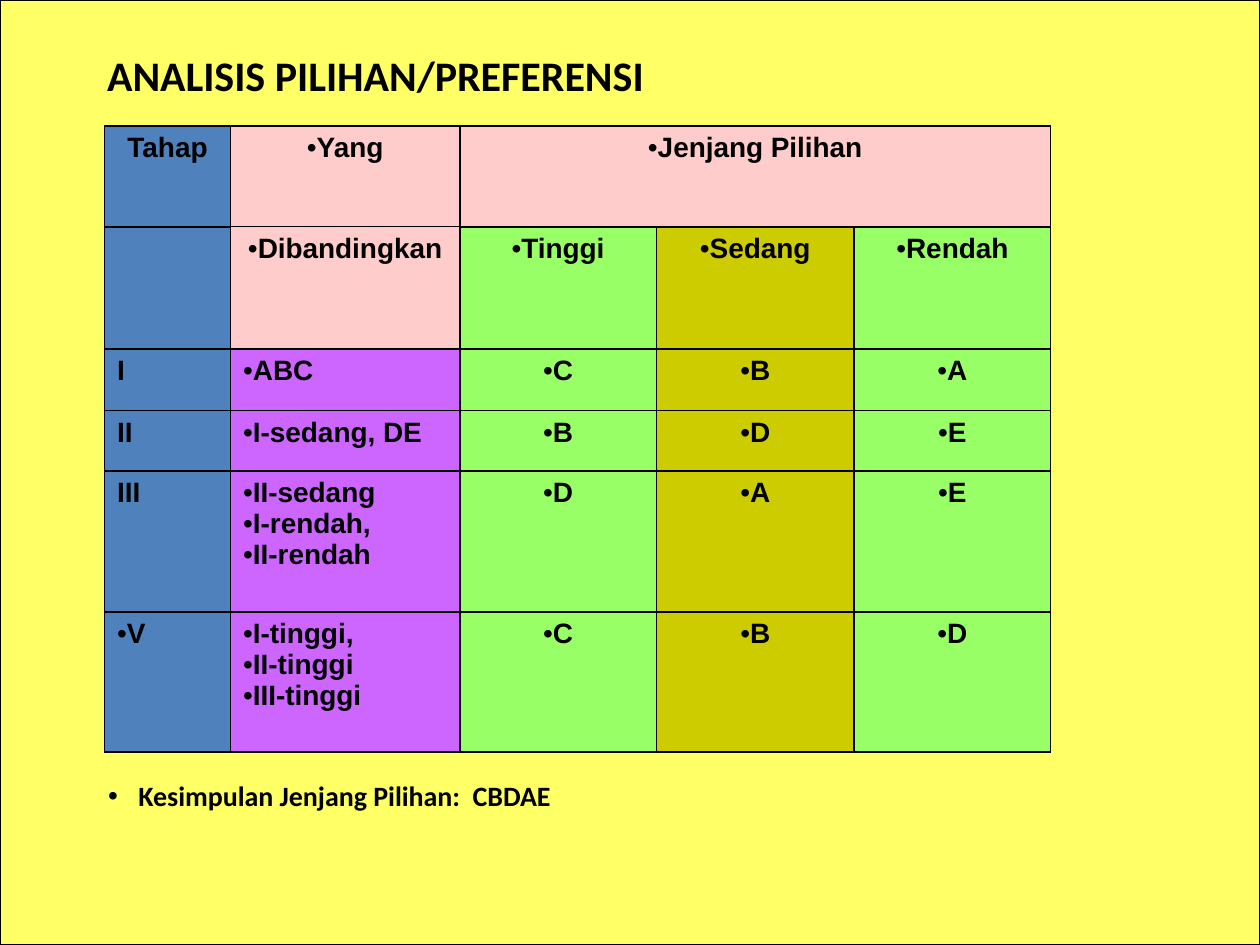
"""Build a preference-analysis slide with a staged comparison table."""
from lxml import etree
from pptx import Presentation, util as u
from pptx.dml.color import RGBColor
from pptx.enum import shapes, text
from pptx.oxml import ns

BLACK, BLUE, PINK = "000000", "4F81BD", "FFCCCC"
PURPLE, GREEN, OLIVE = "CC66FF", "99FF66", "CCCC00"
CENTER, JUSTIFY, LEFT = text.PP_ALIGN.CENTER, text.PP_ALIGN.JUSTIFY, text.PP_ALIGN.LEFT


def paint(fill, color):
    fill.solid()
    fill.fore_color.rgb = RGBColor.from_string(color)


def write(paragraph, words, font, size, align, bullet=False, margin=0, indent=0):
    paragraph.alignment = align
    run = paragraph.add_run()
    run.text = words
    run.font.name, run.font.size, run.font.bold = font, u.Pt(size), True
    paint(run.font.fill, BLACK)
    if bullet:
        props = paragraph._p.get_or_add_pPr()
        props.set("marL", str(u.Inches(margin)))
        props.set("indent", str(u.Inches(indent)))
        etree.SubElement(props, ns.qn("a:buFont"), typeface="Arial")
        etree.SubElement(props, ns.qn("a:buChar"), char="•")


deck = Presentation()
deck.slide_width, deck.slide_height = u.Inches(10), u.Inches(7.5)
slide = deck.slides.add_slide(deck.slide_layouts[5])

backdrop = slide.shapes.add_shape(
    shapes.MSO_SHAPE.RECTANGLE, 0, 0, deck.slide_width, deck.slide_height)
backdrop.shadow.inherit = False
paint(backdrop.fill, "FFFF66")
paint(backdrop.line.fill, BLACK)
backdrop.line.width = u.Pt(0.75)
slide.shapes._spTree.insert(2, backdrop._element)

heading = slide.shapes.title
heading.left, heading.top = u.Inches(0.75), u.Inches(0.34)
heading.width, heading.height = u.Inches(5.4), u.Inches(0.5)
heading.text_frame.word_wrap = False
heading.text_frame.vertical_anchor = text.MSO_ANCHOR.TOP
write(heading.text_frame.paragraphs[0], "ANALISIS PILIHAN/PREFERENSI", "Calibri", 24, LEFT)

stages = [
    ["Tahap", "Yang", "Jenjang Pilihan", "", ""],
    ["", "Dibandingkan", "Tinggi", "Sedang", "Rendah"],
    ["I", "ABC", "C", "B", "A"],
    ["II", "I-sedang, DE", "B", "D", "E"],
    ["III", "II-sedang \nI-rendah, \nII-rendah", "D", "A", "E"],
    ["V", "I-tinggi, \nII-tinggi\nIII-tinggi", "C", "B", "D"],
]
row_colors = [[BLUE] + [PINK] * 4, [BLUE, PINK, GREEN, OLIVE, GREEN]]
row_colors += [[BLUE, PURPLE, GREEN, OLIVE, GREEN]] * 4
widths = [1, 1.82, 1.56, 1.57, 1.56]
heights = [0.8, 0.97, 0.49, 0.48, 1.12, 1.11]

ranking = slide.shapes.add_table(
    len(heights), len(widths), u.Inches(0.83), u.Inches(1),
    u.Inches(sum(widths)), u.Inches(sum(heights))).table
for column, width in zip(ranking.columns, widths):
    column.width = u.Inches(width)
for row, height in zip(ranking.rows, heights):
    row.height = u.Inches(height)
ranking.cell(0, 2).merge(ranking.cell(0, 4))

for r, (stage, colors) in enumerate(zip(stages, row_colors)):
    for c, (entry, color) in enumerate(zip(stage, colors)):
        cell = ranking.cell(r, c)
        props = cell._tc.get_or_add_tcPr()
        for side in ("lnL", "lnR", "lnT", "lnB"):
            hairline = (r, c, side) in ((0, 1, "lnB"), (1, 1, "lnT"))
            edge = etree.SubElement(
                props, ns.qn("a:" + side), w=str(u.Pt(0.75 if hairline else 1)))
            ink = etree.SubElement(edge, ns.qn("a:solidFill"))
            etree.SubElement(ink, ns.qn("a:srgbClr"), val=BLACK)
        paint(cell.fill, color)
        align = JUSTIFY if r > 1 and c < 2 else CENTER
        bulleted = c > 0 or entry == "V"
        for i, words in enumerate(entry.split("\n") if entry else []):
            frame = cell.text_frame
            paragraph = frame.add_paragraph() if i else frame.paragraphs[0]
            write(paragraph, words, "Arial", 16, align, bulleted)

conclusion = slide.shapes.add_textbox(
    u.Inches(0.58), u.Inches(6.13), u.Inches(4.22), u.Inches(0.37)).text_frame
conclusion.word_wrap = True
conclusion.vertical_anchor = text.MSO_ANCHOR.MIDDLE
write(conclusion.paragraphs[0], "Kesimpulan Jenjang Pilihan:  CBDAE",
      "Calibri", 16, LEFT, True, margin=0.42, indent=-0.24)

deck.save("out.pptx")
